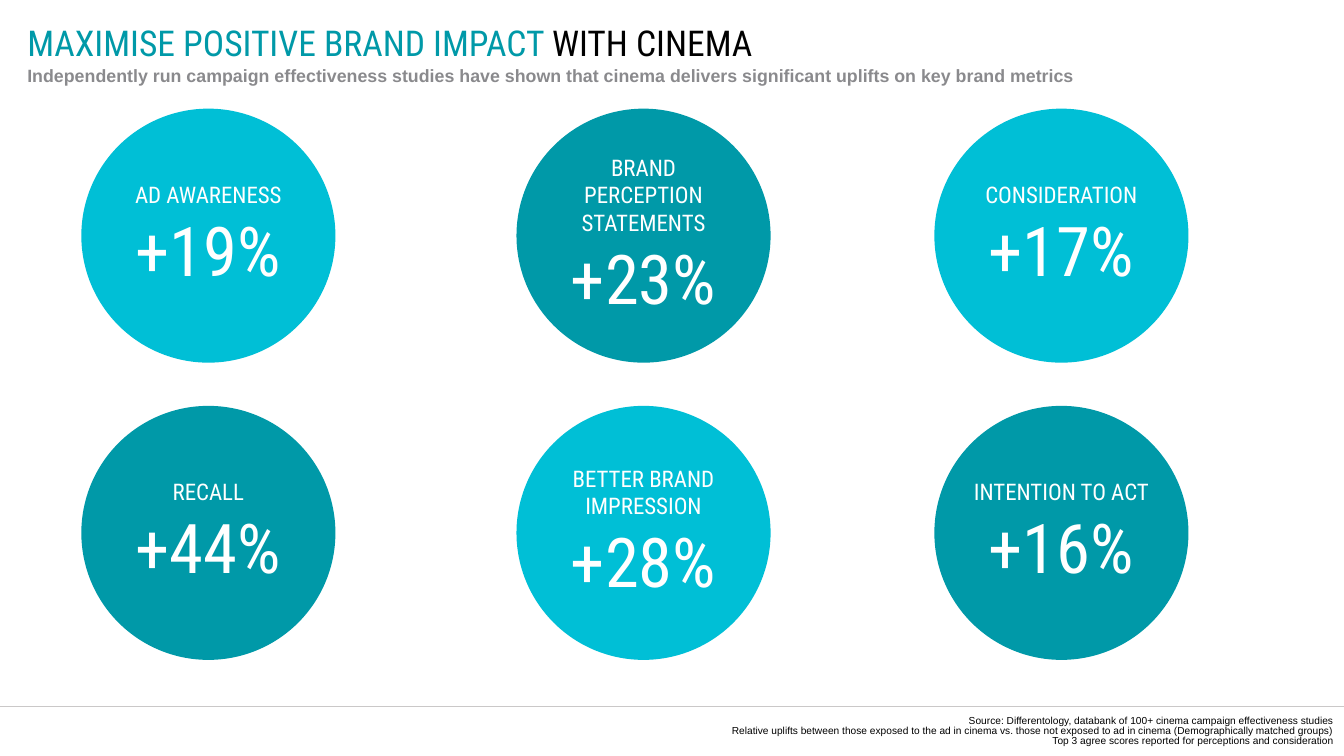
"""Build a slide of six cinema brand uplift figures in circles."""
import pptx
import pptx.util
import pptx.dml.color
import pptx.enum.shapes
import pptx.enum.text
import pptx.oxml

Cm, Pt = pptx.util.Cm, pptx.util.Pt
RGBColor = pptx.dml.color.RGBColor
SHAPE = pptx.enum.shapes.MSO_SHAPE
LINK = pptx.enum.shapes.MSO_CONNECTOR
ALIGN = pptx.enum.text.PP_ALIGN
ANCHOR = pptx.enum.text.MSO_ANCHOR

TEAL = RGBColor(0x00, 0x99, 0xA8)
CYAN = RGBColor(0x00, 0xBF, 0xD6)
GREY = RGBColor(0x8A, 0x8A, 0x8D)
RULE = RGBColor(0xCA, 0xC8, 0xC8)
BLACK = RGBColor(0, 0, 0)
WHITE = RGBColor(255, 255, 255)

HEAD, BODY = "Roboto Condensed", "Arial"
TITLE = [("MAXIMISE POSITIVE BRAND IMPACT ", TEAL), ("WITH CINEMA", BLACK)]
LEAD = ("Independently run campaign effectiveness studies have shown that "
        "cinema delivers significant uplifts on key brand metrics")
NOTES = [
    "Source: Differentology, databank of 100+ cinema campaign effectiveness studies",
    "Relative uplifts between those exposed to the ad in cinema vs. those not "
    "exposed to ad in cinema (Demographically matched groups)",
    "Top 3 agree scores reported for perceptions and consideration",
]
UPLIFTS = [
    [("AD AWARENESS", "+19%"), ("BRAND PERCEPTION STATEMENTS", "+23%"),
     ("CONSIDERATION", "+17%")],
    [("RECALL", "+44%"), ("BETTER BRAND IMPRESSION", "+28%"),
     ("INTENTION TO ACT", "+16%")],
]
WIDTH, HEIGHT = Cm(37.34), Cm(21.01)
LEFTS = [Cm(2.26), Cm(14.35), Cm(25.96)]
TOPS = [Cm(3.02), Cm(11.28)]
SIZE = Cm(7.06)
RULE_TOP = Cm(19.63)


def set_all(item, values):
    for name, value in values.items():
        setattr(item, name, value)


def set_frame(shape, anchor):
    frame = shape.text_frame
    set_all(frame, dict(margin_left=0, margin_right=0, margin_top=0,
                        margin_bottom=0, word_wrap=True,
                        vertical_anchor=anchor))
    return frame


def write(frame, lines, align, space=None):
    """Fill a frame with lines, each a list of (text, font values) runs."""
    for i, runs in enumerate(lines):
        para = frame.add_paragraph() if i else frame.paragraphs[0]
        set_all(para, dict(alignment=align, line_spacing=space))
        for text, look in runs:
            run = para.add_run()
            run.text = text
            values = dict(look)
            run.font.color.rgb = values.pop("color")
            set_all(run.font, values)


def add_text(slide, place, lines, align=ALIGN.LEFT, anchor=ANCHOR.TOP, space=None):
    box = slide.shapes.add_textbox(*[Cm(n) for n in place])
    write(set_frame(box, anchor), lines, align, space)


def add_disc(slide, left, top, fill, label, value):
    disc = slide.shapes.add_shape(SHAPE.OVAL, left, top, SIZE, SIZE)
    disc.shadow.inherit = False
    disc.fill.solid()
    disc.fill.fore_color.rgb = fill
    disc.line.fill.background()
    lines = [[(text, dict(name=HEAD, size=Pt(size), color=WHITE))]
             for text, size in ((label, 18), (value, 54))]
    write(set_frame(disc, ANCHOR.MIDDLE), lines, ALIGN.CENTER)


def add_rule(slide):
    rule = slide.shapes.add_connector(LINK.STRAIGHT, 0, RULE_TOP, WIDTH, RULE_TOP)
    rule.line.color.rgb = RULE
    rule.line.width = Pt(0.5)
    rule.element.spPr.append(pptx.oxml.parse_xml(
        '<a:effectLst xmlns:a="http://schemas.openxmlformats.org/drawingml/2006/main"/>'))


def main():
    deck = pptx.Presentation()
    set_all(deck, dict(slide_width=WIDTH, slide_height=HEIGHT))
    slide = deck.slides.add_slide(deck.slide_layouts[6])
    add_rule(slide)
    add_text(slide, (0.76, 0.76, 34.5, 0.81),
             [[(text, dict(name=HEAD, size=Pt(28), color=color))
               for text, color in TITLE]], anchor=ANCHOR.MIDDLE)
    add_text(slide, (0.76, 1.85, 34.5, 1.22),
             [[(LEAD, dict(name=BODY, size=Pt(14), bold=True, color=GREY))]],
             space=Pt(15))
    add_text(slide, (0.51, 19.91, 36.55, 0.9),
             [[(note, dict(name=BODY, size=Pt(8), color=BLACK))] for note in NOTES],
             align=ALIGN.RIGHT, space=Pt(8))
    for row, (top, pairs) in enumerate(zip(TOPS, UPLIFTS)):
        for col, (left, pair) in enumerate(zip(LEFTS, pairs)):
            fill = TEAL if (row + col) % 2 else CYAN
            add_disc(slide, left, top, fill, *pair)
    deck.save("out.pptx")


if __name__ == "__main__":
    main()
